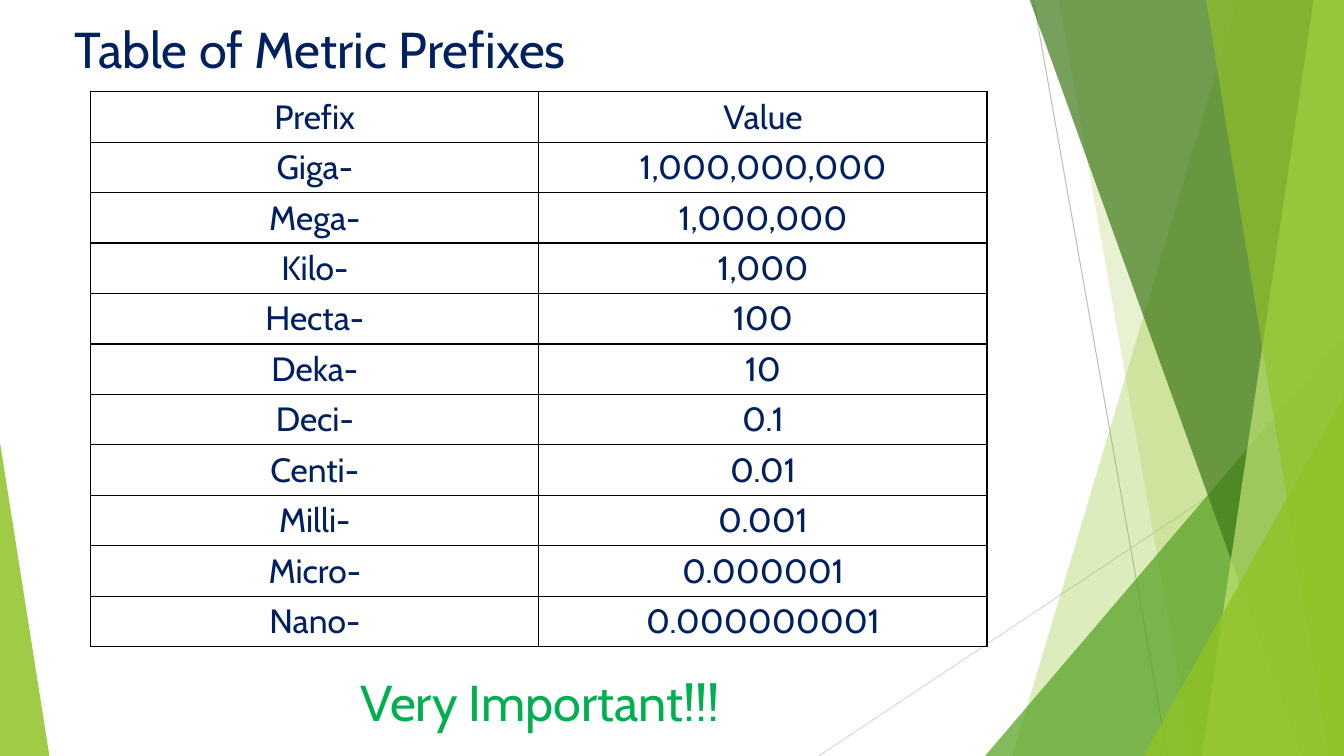
from dataclasses import dataclass

from lxml.etree import SubElement
from pptx import Presentation
from pptx.dml.color import RGBColor
from pptx.enum.shapes import MSO_CONNECTOR as Connector, MSO_SHAPE as Preset
from pptx.enum.text import MSO_ANCHOR as Anchor, PP_ALIGN as Align
from pptx.oxml.ns import qn
from pptx.util import Inches, Pt

WIDTH, HEIGHT = 13.33, 7.5
NAVY, GREEN, LIME = "002060", "00B050", "90C226"


@dataclass
class Ray:
    """A thin straight line across the decoration."""
    start: tuple[float, float]
    end: tuple[float, float]
    color: str


@dataclass
class Panel:
    """A full-height panel that ends at the right edge of the page."""
    top_left: float
    bottom_left: float
    color: str
    opacity: int


@dataclass
class Wedge:
    """A right triangle standing on the bottom edge."""
    left: float
    width: float
    height: float
    apex: float
    color: str
    opacity: int


@dataclass
class Label:
    text: str
    left: float
    top: float
    width: float
    height: float
    color: str


RAYS = [
    Ray((10.25, 0), (11.58, HEIGHT), "BFBFBF"),
    Ray((WIDTH, 4.03), (8.12, HEIGHT), "D9D9D9"),
]
DECORATION = [
    Panel(12.28, 10.04, LIME, 30),
    Panel(10.5, 11.83, LIME, 20),
    Wedge(9.77, 3.56, 4.17, 1, "54A021", 72),
    Panel(10.21, 12.91, "3F7819", 70),
    Panel(13.03, 11.92, "C0E474", 70),
    Panel(11.96, 13.18, LIME, 65),
    Wedge(11.34, 1.99, 3.57, 1, LIME, 80),
    Wedge(0, 0.49, 3.11, 0, LIME, 85),
]
LABELS = [
    Label("Table of Metric Prefixes", 0.64, 0.13, 9.4, 1.44, NAVY),
    Label("Very Important!!!", 3.48, 6.61, 4.21, 0.89, GREEN),
]
PREFIXES = [
    ("Prefix", "Value"),
    ("Giga-", "1,000,000,000"),
    ("Mega-", "1,000,000"),
    ("Kilo-", "1,000"),
    ("Hecta-", "100"),
    ("Deka-", "10"),
    ("Deci-", "0.1"),
    ("Centi-", "0.01"),
    ("Milli-", "0.001"),
    ("Micro-", "0.000001"),
    ("Nano-", "0.000000001"),
]


def rgb(color: str) -> RGBColor:
    return RGBColor.from_string(color)


def paint(shape, color: str, opacity: int) -> None:
    shape.shadow.inherit = False
    shape.line.fill.background()
    shape.fill.solid()
    shape.fill.fore_color.rgb = rgb(color)
    tint = shape.fill._xPr.find(qn("a:solidFill"))[0]
    SubElement(tint, qn("a:alpha"), val=str(opacity * 1000))


def draw_ray(page, ray: Ray) -> None:
    ends = [Inches(value) for value in (*ray.start, *ray.end)]
    line = page.shapes.add_connector(Connector.STRAIGHT, *ends)
    line.line.color.rgb = rgb(ray.color)
    line.line.width = Pt(0.75)
    SubElement(line._element.spPr, qn("a:effectLst"))


def draw_panel(page, panel: Panel) -> None:
    top = -0.01
    corners = [(WIDTH, top), (WIDTH, HEIGHT), (panel.bottom_left, HEIGHT)]
    builder = page.shapes.build_freeform(Inches(panel.top_left), Inches(top))
    builder.add_line_segments([(Inches(x), Inches(y)) for x, y in corners], close=True)
    paint(builder.convert_to_shape(), panel.color, panel.opacity)


def draw_wedge(page, wedge: Wedge) -> None:
    shape = page.shapes.add_shape(
        Preset.ISOSCELES_TRIANGLE, Inches(wedge.left), Inches(HEIGHT - wedge.height),
        Inches(wedge.width), Inches(wedge.height))
    shape.adjustments[0] = wedge.apex
    paint(shape, wedge.color, wedge.opacity)


def write(para, text: str, size: int, color: str) -> None:
    span = para.add_run()
    span.text = text
    span.font.name = "Cabin"
    span.font.size = Pt(size)
    span.font.color.rgb = rgb(color)


def draw_label(page, label: Label) -> None:
    box = page.shapes.add_textbox(
        Inches(label.left), Inches(label.top), Inches(label.width), Inches(label.height))
    box.text_frame.word_wrap = True
    write(box.text_frame.paragraphs[0], label.text, 36, label.color)


def style_cell(cell) -> None:
    properties = cell._tc.get_or_add_tcPr()
    for side in ("lnL", "lnR", "lnT", "lnB"):
        border = SubElement(properties, qn(f"a:{side}"), w=str(Pt(1)))
        fill = SubElement(border, qn("a:solidFill"))
        SubElement(fill, qn("a:srgbClr"), val="000000")
    cell.fill.background()
    cell.vertical_anchor = Anchor.MIDDLE


def draw_table(page, rows: list[tuple[str, str]]) -> None:
    frame = page.shapes.add_table(
        len(rows), 2, Inches(0.9), Inches(0.91), Inches(8.89), Inches(0.5 * len(rows)))
    table = frame.table
    table.first_row = table.horz_banding = False
    for row, texts in enumerate(rows):
        for column, text in enumerate(texts):
            cell = table.cell(row, column)
            style_cell(cell)
            para = cell.text_frame.paragraphs[0]
            para.alignment = Align.CENTER
            write(para, text, 24, NAVY)


def main() -> None:
    deck = Presentation()
    deck.slide_width, deck.slide_height = Inches(WIDTH), Inches(HEIGHT)
    page = deck.slides.add_slide(deck.slide_layouts[6])

    # Background decoration, back to front
    for ray in RAYS:
        draw_ray(page, ray)
    for part in DECORATION:
        if isinstance(part, Panel):
            draw_panel(page, part)
        else:
            draw_wedge(page, part)

    # Title, table and closing remark
    title, remark = LABELS
    draw_label(page, title)
    draw_table(page, PREFIXES)
    draw_label(page, remark)

    deck.save("out.pptx")


if __name__ == "__main__":
    main()
